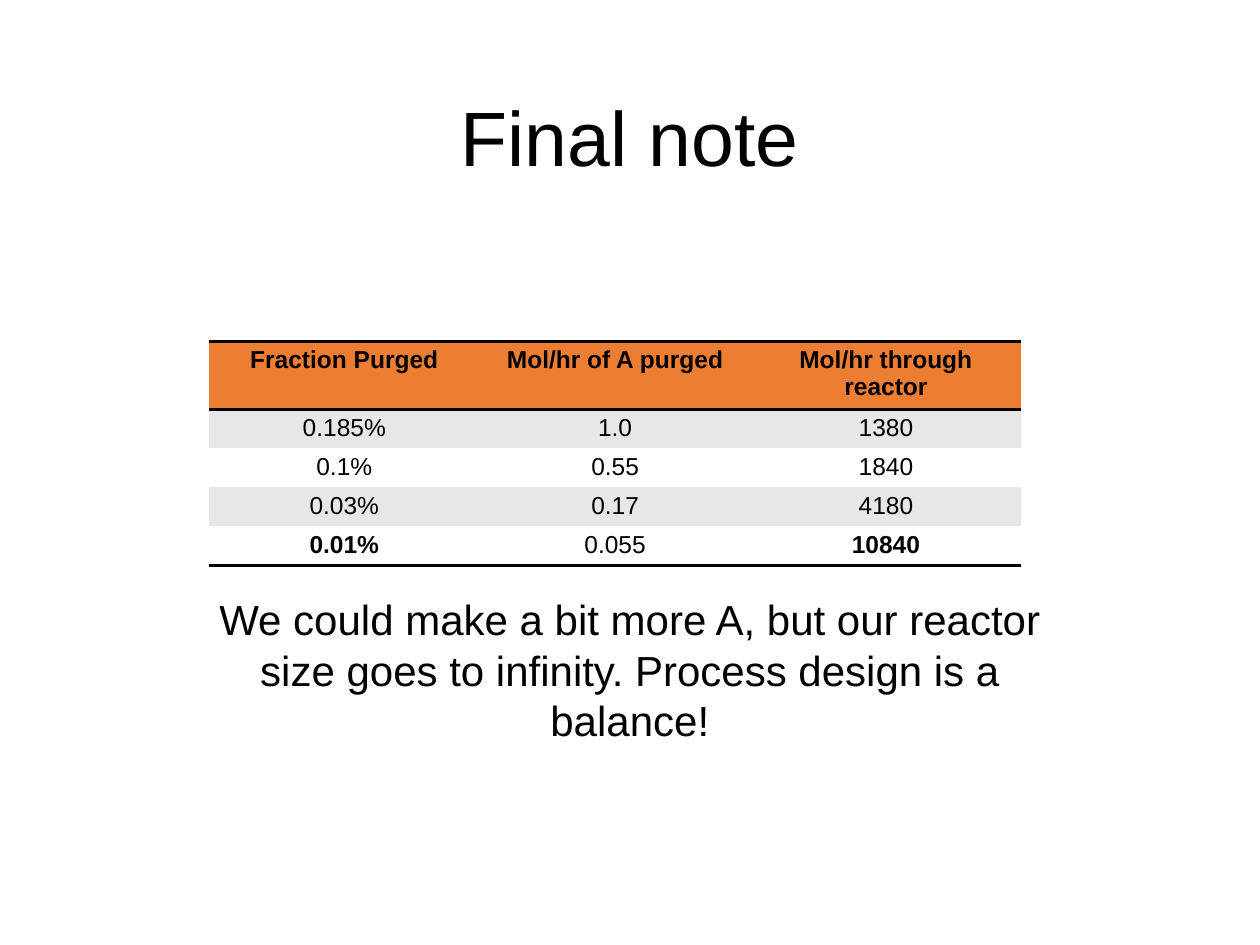
import pptx
import pptx.util
import pptx.dml.color
import pptx.enum.text
import pptx.oxml
import pptx.oxml.ns

Pt = pptx.util.Pt
RGBColor = pptx.dml.color.RGBColor
ANCHOR = pptx.enum.text.MSO_ANCHOR
CENTER = pptx.enum.text.PP_ALIGN.CENTER

BLACK = RGBColor(0x00, 0x00, 0x00)
WHITE = RGBColor(0xFF, 0xFF, 0xFF)
ORANGE = RGBColor(0xED, 0x7D, 0x31)
GREY = RGBColor(0xE7, 0xE7, 0xE7)
FONT = "Arial"
PLAIN_STYLE = "{2D5ABB26-0587-4C30-8999-92F81FD0307C}"

TITLE = "Final note"
CONCLUSION = ("We could make a bit more A, but our reactor size goes to infinity. "
              "Process design is a balance!")
ROWS = [
    ("Fraction Purged", "Mol/hr of A purged", "Mol/hr through reactor"),
    ("0.185%", "1.0", "1380"),
    ("0.1%", "0.55", "1840"),
    ("0.03%", "0.17", "4180"),
    ("0.01%", "0.055", "10840"),
]
BOLD_VALUES = {*ROWS[0], "0.01%", "10840"}

TABLE_LEFT, TABLE_TOP = 119.4, 195
COLUMN_WIDTH, ROW_HEIGHT = 154.75, 21.9
RULE_WIDTH = 2


def write(text_frame, text, size, bold=False):
    text_frame.text = text
    para = text_frame.paragraphs[0]
    para.alignment = CENTER
    font = para.runs[0].font
    font.name, font.size, font.bold = FONT, Pt(size), bold
    font.color.rgb = BLACK
    return para


def add_text(page, text, size, left, top, width, height, anchor):
    box = page.shapes.add_textbox(Pt(left), Pt(top), Pt(width), Pt(height))
    box.text_frame.word_wrap = True
    box.text_frame.vertical_anchor = anchor
    return write(box.text_frame, text, size)


def rule(cell, *edges):
    """Draw black rules on the named cell edges, given in the order T, B."""
    for position, edge in enumerate(edges):
        line = pptx.oxml.parse_xml(
            f'<a:ln{edge} {pptx.oxml.ns.nsdecls("a")} w="{Pt(RULE_WIDTH)}">'
            f'<a:solidFill><a:srgbClr val="{BLACK}"/></a:solidFill></a:ln{edge}>')
        cell._tc.get_or_add_tcPr().insert(position, line)


def add_purge_table(page):
    columns, last = len(ROWS[0]), len(ROWS) - 1
    table = page.shapes.add_table(
        len(ROWS), columns, Pt(TABLE_LEFT), Pt(TABLE_TOP),
        Pt(COLUMN_WIDTH * columns), Pt(ROW_HEIGHT * len(ROWS))).table
    table._tbl.tblPr.find(pptx.oxml.ns.qn("a:tableStyleId")).text = PLAIN_STYLE
    for column in table.columns:
        column.width = Pt(COLUMN_WIDTH)
    for r, values in enumerate(ROWS):
        table.rows[r].height = Pt(ROW_HEIGHT)
        for c, value in enumerate(values):
            cell = table.cell(r, c)
            cell.margin_left = cell.margin_right = Pt(5.4)
            cell.margin_top = cell.margin_bottom = Pt(2.7)
            write(cell.text_frame, value, 14, value in BOLD_VALUES)
            cell.fill.solid()
            cell.fill.fore_color.rgb = ORANGE if r == 0 else GREY if r % 2 else WHITE
            if r == 0:
                rule(cell, "T", "B")
            elif r == last:
                rule(cell, "B")


def main():
    deck = pptx.Presentation()
    deck.slide_width, deck.slide_height = Pt(720), Pt(540)
    page = deck.slides.add_slide(deck.slide_layouts[6])
    title = add_text(page, TITLE, 44, 49.5, 28.8, 621, 104.4, ANCHOR.MIDDLE)
    title.line_spacing = 0.9
    add_purge_table(page)
    conclusion = add_text(page, CONCLUSION, 24, 108.9, 335.5, 502, 94.3, ANCHOR.TOP)
    conclusion.line_spacing = Pt(28.9)
    deck.save("out.pptx")


if __name__ == "__main__":
    main()
